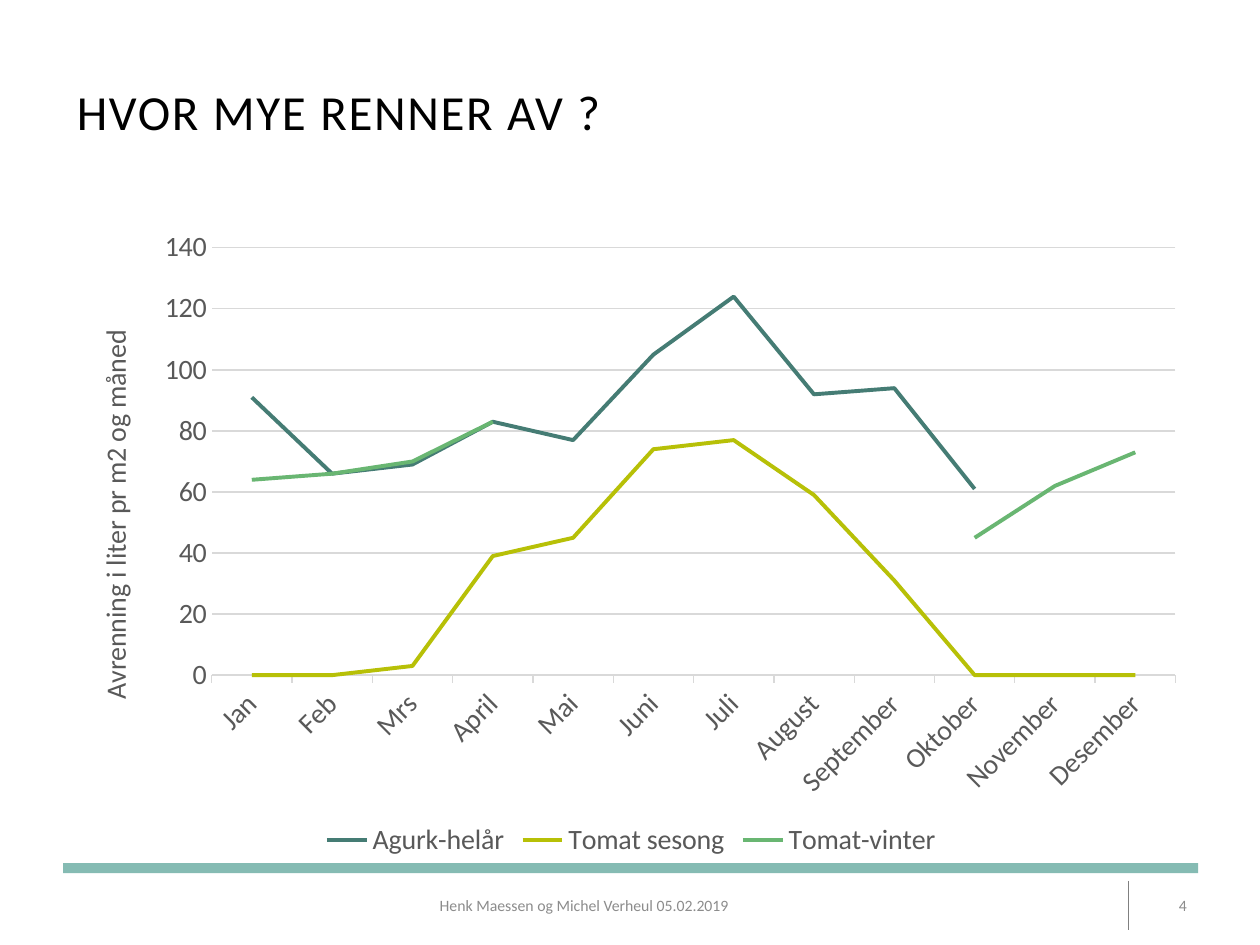
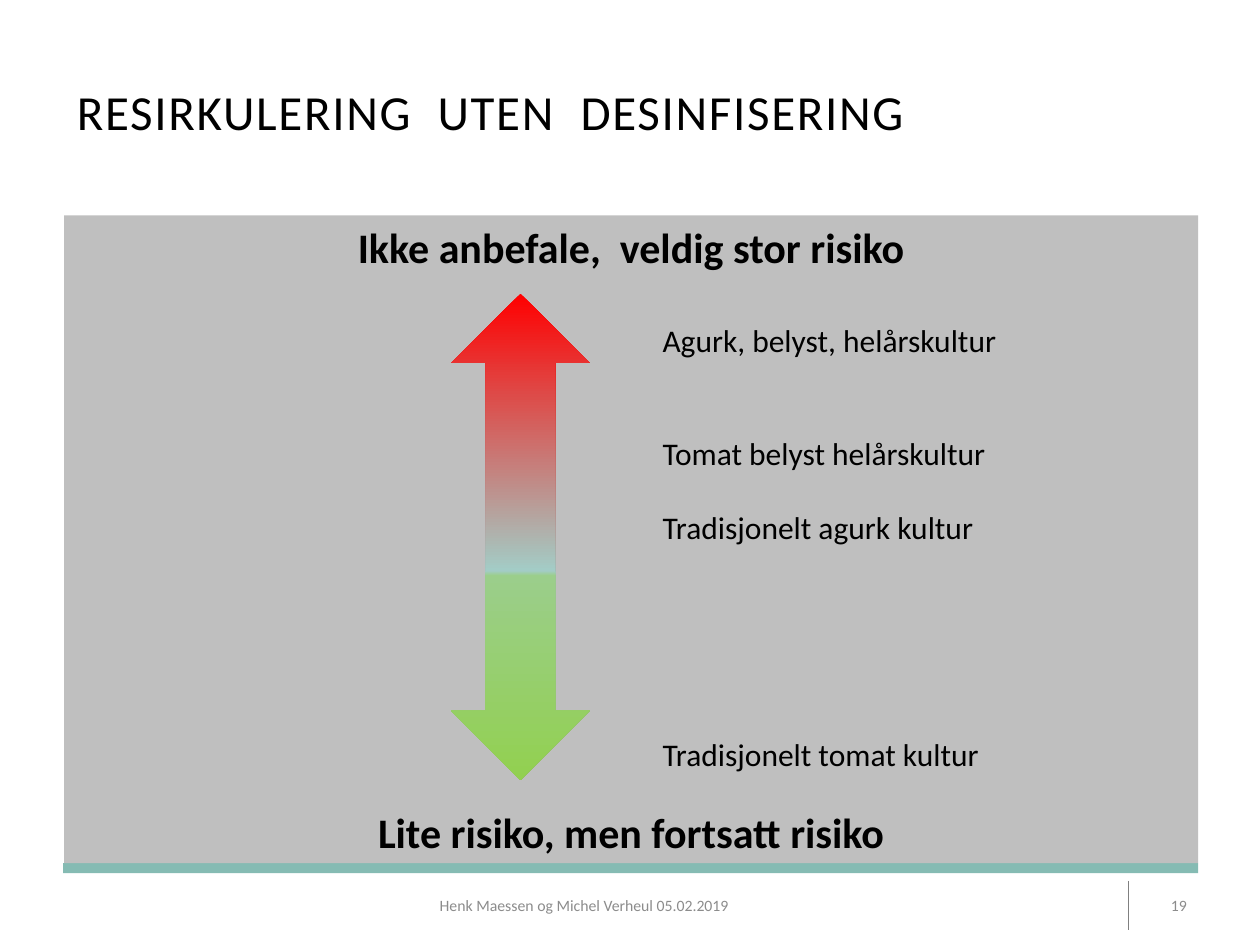
from lxml.etree import SubElement
from pptx import Presentation
from pptx.chart.data import CategoryChartData
from pptx.dml.color import RGBColor
from pptx.enum.chart import XL_CHART_TYPE, XL_LEGEND_POSITION, XL_TICK_MARK
from pptx.enum.shapes import MSO_CONNECTOR, MSO_SHAPE
from pptx.enum.text import MSO_ANCHOR as ANCHOR, PP_ALIGN as ALIGN
from pptx.oxml.ns import qn
from pptx.util import Pt

FONT = "Calibri"
COLORS = {
    "text": "000000", "footer": "8C8C8C", "band": "85BBB3", "divider": "808080",
    "panel": "BFBFBF", "axis_text": "595959", "grid": "D9D9D9",
    "cucumber": "457C74", "tomato_season": "B7C007", "tomato_winter": "69B672",
}
RISK_STOPS = [(0, "FF0000"), (57, "A3CCC6"), (58, "9BCE8B"), (100, "92D050")]
FOOTER = "Henk Maessen og Michel Verheul 05.02.2019"
CONTENT = (Pt(36.7), Pt(123.1), Pt(648), Pt(370.1))
MONTHS = ["Jan", "Feb", "Mrs", "April", "Mai", "Juni", "Juli", "August",
          "September", "Oktober", "November", "Desember"]
RUNOFF = [
    ("Agurk-helår", "cucumber", [91, 66, 69, 83, 77, 105, 124, 92, 94, 61, None, None]),
    ("Tomat sesong", "tomato_season", [0, 0, 3, 39, 45, 74, 77, 59, 31, 0, 0, 0]),
    ("Tomat-vinter", "tomato_winter",
     [64, 66, 70, 83, None, None, None, None, None, 45, 62, 73]),
]
PLOT_LAYOUT = {"layoutTarget": "inner", "xMode": "edge", "yMode": "edge",
               "x": 0.13, "y": 0.05, "w": 0.85, "h": 0.66}
ROW_PITCH = 21.6
LINE_HEIGHT = 22
CULTURES = [("Agurk, belyst, helårskultur", 0), ("Tomat belyst helårskultur", 3),
            ("Tradisjonelt agurk kultur", 2), ("Tradisjonelt tomat kultur", 6)]


def color(name):
    return RGBColor.from_string(COLORS[name])


def set_values(target, values):
    for name, value in values.items():
        setattr(target, name, value)


def format_font(font, size, color_name="text", bold=False):
    set_values(font, {"name": FONT, "size": Pt(size), "bold": bold})
    font.color.rgb = color(color_name)


def format_line(line, color_name, width):
    line.color.rgb = color(color_name)
    line.width = Pt(width)


def write_paragraphs(frame, entries, size, color_name="text", bold=False, align=ALIGN.LEFT):
    for index, (text, space_before) in enumerate(entries):
        paragraph = frame.paragraphs[0] if index == 0 else frame.add_paragraph()
        paragraph.text = text
        set_values(paragraph, {"alignment": align, "space_before": Pt(space_before)})
        format_font(paragraph.font, size, color_name, bold)


def add_text(slide, box, entries, size, color_name="text", align=ALIGN.LEFT,
             anchor=ANCHOR.TOP, wrap=True):
    frame = slide.shapes.add_textbox(*box).text_frame
    set_values(frame, {"word_wrap": wrap, "vertical_anchor": anchor})
    write_paragraphs(frame, entries, size, color_name, align=align)


def add_plain_shape(slide, kind, box):
    shape = slide.shapes.add_shape(kind, *box)
    shape.shadow.inherit = False
    shape.line.fill.background()
    return shape


def add_filled_rectangle(slide, box, color_name):
    shape = add_plain_shape(slide, MSO_SHAPE.RECTANGLE, box)
    shape.fill.solid()
    shape.fill.fore_color.rgb = color(color_name)
    return shape


def add_divider(slide, x, top, bottom):
    divider = slide.shapes.add_connector(MSO_CONNECTOR.STRAIGHT, x, top, x, bottom)
    format_line(divider.line, "divider", 0.75)
    SubElement(divider._element.spPr, qn("a:effectLst"))


def add_title(slide, text):
    title = slide.shapes.title
    set_values(title, {"left": Pt(36.7), "top": Pt(23), "width": Pt(648), "height": Pt(80.6)})
    set_values(title.text_frame, {"word_wrap": True, "vertical_anchor": ANCHOR.MIDDLE})
    write_paragraphs(title.text_frame, [(text, 0)], 28)
    paragraph = title.text_frame.paragraphs[0]
    paragraph.line_spacing = Pt(34)
    paragraph.runs[0].font._element.set("spc", "100")


def add_base_slide(presentation, title, number):
    slide = presentation.slides.add_slide(presentation.slide_layouts[5])
    add_title(slide, title)
    add_filled_rectangle(slide, (Pt(36), Pt(493.2), Pt(648.7), Pt(5.8)), "band")
    add_divider(slide, Pt(645), Pt(503.3), Pt(531.4))
    for left, width, text, align in ((645, 40.3, number, ALIGN.RIGHT),
                                     (114.5, 438.5, FOOTER, ALIGN.CENTER)):
        box = (Pt(left), Pt(503.3), Pt(width), Pt(28.1))
        add_text(slide, box, [(text, 0)], 9, "footer", align, ANCHOR.MIDDLE)
    return slide


def set_plot_layout(chart):
    plot_area = chart._chartSpace.chart.plotArea
    for old_layout in plot_area.findall(qn("c:layout")):
        plot_area.remove(old_layout)
    layout = plot_area.makeelement(qn("c:layout"))
    plot_area.insert(0, layout)
    manual = SubElement(layout, qn("c:manualLayout"))
    for name, value in PLOT_LAYOUT.items():
        SubElement(manual, qn(f"c:{name}")).set("val", str(value))


def format_axes(chart):
    months, liters = chart.category_axis, chart.value_axis
    for axis in (months, liters):
        format_font(axis.tick_labels.font, 16, "axis_text")
    format_line(months.format.line, "grid", 0.75)
    months.major_tick_mark = XL_TICK_MARK.OUTSIDE
    months._element.xpath("c:txPr/a:bodyPr")[0].set("rot", "-2700000")
    set_values(liters, {"minimum_scale": 0, "maximum_scale": 140, "major_unit": 20,
                        "major_tick_mark": XL_TICK_MARK.NONE, "has_major_gridlines": True})
    liters.format.line.fill.background()
    format_line(liters.major_gridlines.format.line, "grid", 0.75)
    frame = liters.axis_title.text_frame
    write_paragraphs(frame, [("Avrenning i liter pr m2 og måned", 0)], 16, "axis_text",
                     align=ALIGN.CENTER)
    frame._txBody.bodyPr.set("rot", "-5400000")


def add_runoff_chart(slide):
    data = CategoryChartData()
    data.categories = MONTHS
    for name, _, values in RUNOFF:
        data.add_series(name, values)
    chart = slide.shapes.add_chart(XL_CHART_TYPE.LINE, *CONTENT, data).chart
    format_font(chart.font, 16)
    set_values(chart, {"has_title": False, "has_legend": True})
    set_values(chart.legend, {"position": XL_LEGEND_POSITION.BOTTOM,
                              "include_in_layout": False})
    format_font(chart.legend.font, 16, "axis_text")
    chart.plots[0].vary_by_categories = False
    for series, (_, color_name, _) in zip(chart.plots[0].series, RUNOFF):
        series.smooth = False
        format_line(series.format.line, color_name, 2.25)
    format_axes(chart)
    set_plot_layout(chart)


def add_risk_panel(slide):
    panel = add_filled_rectangle(slide, CONTENT, "panel")
    panel.text_frame.vertical_anchor = ANCHOR.TOP
    labels = [("Ikke anbefale,  veldig stor risiko", 0),
              ("Lite risiko, men fortsatt risiko", 305.6)]
    write_paragraphs(panel.text_frame, labels, 24, bold=True, align=ALIGN.CENTER)


def add_risk_arrow(slide):
    arrow = add_plain_shape(slide, MSO_SHAPE.UP_DOWN_ARROW,
                            (Pt(257.8), Pt(167.8), Pt(79.2), Pt(277.9)))
    arrow.fill.gradient()
    arrow.fill.gradient_angle = 270
    stops = arrow._element.spPr.find(qn("a:gradFill")).find(qn("a:gsLst"))
    for stop in list(stops):
        stops.remove(stop)
    for percent, hex_color in RISK_STOPS:
        stop = SubElement(stops, qn("a:gs"), pos=str(percent * 1000))
        SubElement(stop, qn("a:srgbClr"), val=hex_color)


def add_culture_list(slide):
    entries = [(text, max(0, rows * ROW_PITCH - LINE_HEIGHT)) for text, rows in CULTURES]
    add_text(slide, (Pt(371.5), Pt(179.8), Pt(207.4), Pt(269.3)), entries, 18, wrap=False)


def main():
    presentation = Presentation()
    set_values(presentation, {"slide_width": Pt(720), "slide_height": Pt(540)})
    runoff_slide = add_base_slide(presentation, "HVOR MYE RENNER AV ?", "4")
    add_runoff_chart(runoff_slide)
    risk_slide = add_base_slide(presentation, "RESIRKULERING  UTEN  DESINFISERING", "19")
    add_risk_panel(risk_slide)
    add_risk_arrow(risk_slide)
    add_culture_list(risk_slide)
    presentation.save("out.pptx")


if __name__ == "__main__":
    main()
